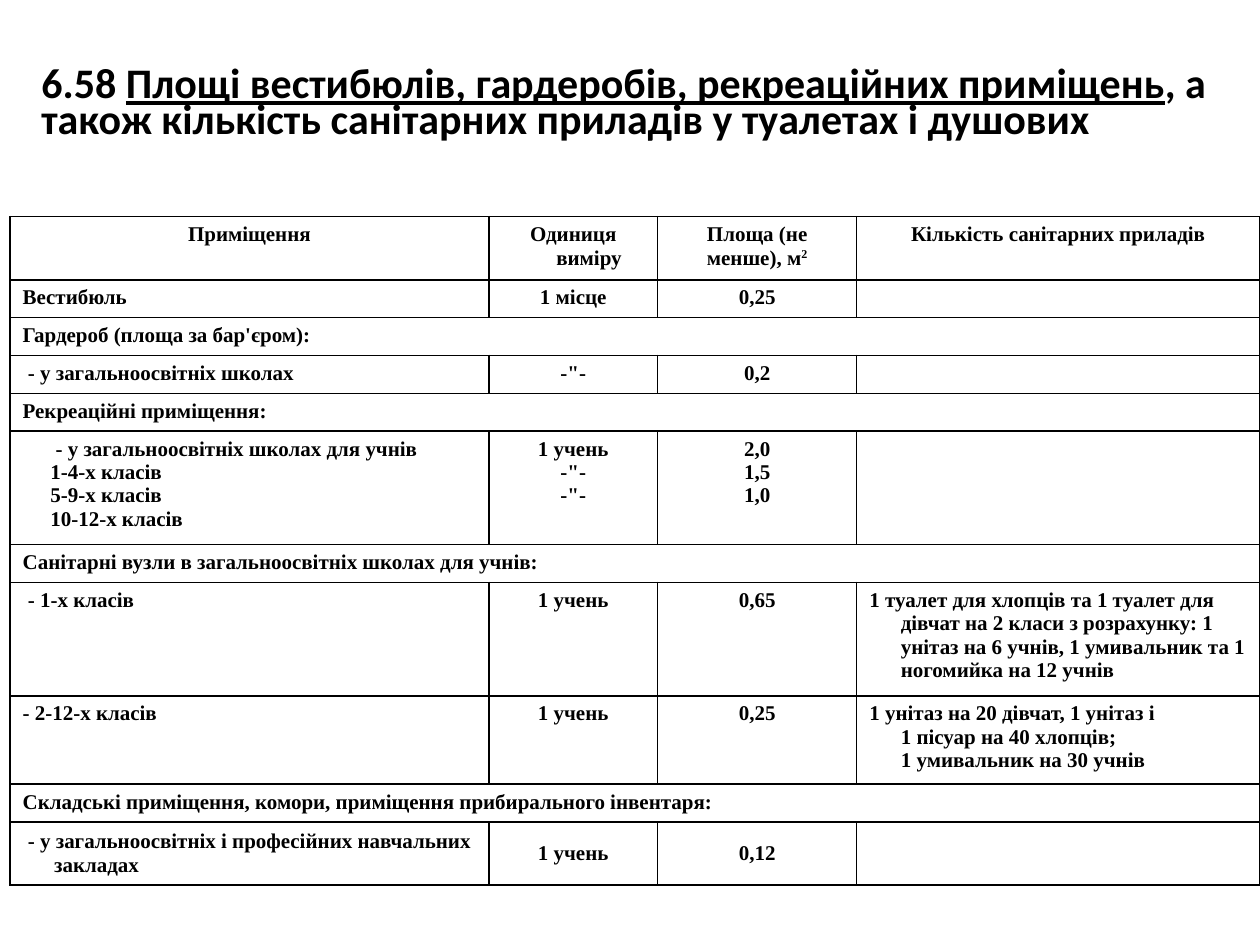
from lxml.etree import SubElement
from pptx import Presentation
from pptx.dml.color import RGBColor
from pptx.enum.text import MSO_ANCHOR as Anchor, PP_ALIGN as Align
from pptx.oxml.ns import qn
from pptx.util import Inches, Pt

BLACK = RGBColor(0, 0, 0)
WHITE = RGBColor(255, 255, 255)
TITLE_FONT, TABLE_FONT = "Calibri", "Times New Roman"

TITLE_SPANS = [
    ("6.58 ", False),
    ("Площі вестибюлів, гардеробів, рекреаційних приміщень", True),
    (", а також кількість санітарних приладів у туалетах і душових", False),
]

COLUMN_WIDTHS = [3.8, 1.34, 1.58, 3.2]
LINE_HEIGHT, ROW_PADDING = 0.185, 0.1
DITTO = '-"-'

# Each row: lines of text it holds, then its cells; a cell is a list of
# paragraphs, and a row with a single cell spans the whole table.
ROWS = [
    (2, [["Приміщення"], ["Одиниця виміру"], ["Площа (не", "менше), м^2"],
         ["Кількість санітарних приладів"]]),
    (1, [["Вестибюль"], ["1 місце"], ["0,25"], []]),
    (1, [["Гардероб (площа за бар'єром):"]]),
    (1, [[" - у загальноосвітніх школах"], [DITTO], ["0,2"], []]),
    (1, [["Рекреаційні приміщення:"]]),
    (4, [[" - у загальноосвітніх школах для учнів", "1-4-х класів",
          "5-9-х класів", "10-12-х класів"],
         ["1 учень", DITTO, DITTO], ["2,0", "1,5", "1,0"], []]),
    (1, [["Санітарні вузли в загальноосвітніх школах для учнів:"]]),
    (4, [[" - 1-х класів"], ["1 учень"], ["0,65"],
         ["1 туалет для хлопців та 1 туалет для дівчат на 2 класи з розрахунку: "
          "1 унітаз на 6 учнів, 1 умивальник та 1 ногомийка на 12 учнів"]]),
    (3, [["- 2-12-х класів"], ["1 учень"], ["0,25"],
         ["1 унітаз на 20 дівчат, 1 унітаз і \n1 пісуар на 40 хлопців; \n"
          "1 умивальник на 30 учнів"]]),
    (1, [["Складські приміщення, комори, приміщення прибирального інвентаря:"]]),
    (2, [[" - у загальноосвітніх і професійних навчальних закладах"],
         ["1 учень"], ["0,12"], []]),
]
LAST_ROW = len(ROWS) - 1


def add_span(para, text, font_name, size):
    span = para.add_run()
    span.text = text
    span.font.name = font_name
    span.font.size = Pt(size)
    span.font.bold = True
    span.font.color.rgb = BLACK
    return span


def add_title(page, left, top, width, height):
    box = page.shapes.add_textbox(Inches(left), Inches(top), Inches(width), Inches(height))
    frame = box.text_frame
    frame.word_wrap = True
    frame.vertical_anchor = Anchor.MIDDLE
    para = frame.paragraphs[0]
    para.line_spacing = 0.7
    for text, underlined in TITLE_SPANS:
        add_span(para, text, TITLE_FONT, 24).font.underline = underlined


def style_cell(cell):
    """White fill, thin black borders and a small font even when empty."""
    properties = cell._tc.get_or_add_tcPr()
    for side in ("a:lnL", "a:lnR", "a:lnT", "a:lnB"):
        line = SubElement(properties, qn(side), w=str(Pt(1)))
        fill = SubElement(line, qn("a:solidFill"))
        SubElement(fill, qn("a:srgbClr"), val=str(BLACK))
    cell.fill.solid()
    cell.fill.fore_color.rgb = WHITE
    SubElement(cell.text_frame.paragraphs[0]._p, qn("a:endParaRPr"), sz="1200")


def write_paragraph(para, text, align, first_indent):
    para.alignment = align
    indents = para._p.get_or_add_pPr()
    indents.set("marL", str(Inches(0.25)))
    indents.set("indent", str(Inches(first_indent)))
    for number, line in enumerate(text.split("\n")):
        if number:
            para.add_line_break()
        body, _, superscript = line.partition("^")
        add_span(para, body, TABLE_FONT, 12)
        if superscript:
            raised = add_span(para, superscript, TABLE_FONT, 12)
            raised._r.get_or_add_rPr().set("baseline", "30000")


def fill_cell(cell, paragraphs, align, first_indent):
    frame = cell.text_frame
    for number, text in enumerate(paragraphs):
        para = frame.add_paragraph() if number else frame.paragraphs[0]
        write_paragraph(para, text, align, first_indent)


def add_norms_table(page, left, top):
    heights = [lines * LINE_HEIGHT + ROW_PADDING for lines, _ in ROWS]
    table = page.shapes.add_table(
        len(ROWS), len(COLUMN_WIDTHS), Inches(left), Inches(top),
        Inches(sum(COLUMN_WIDTHS)), Inches(sum(heights))).table
    for column, width in zip(table.columns, COLUMN_WIDTHS):
        column.width = Inches(width)
    for row, height in zip(table.rows, heights):
        row.height = Inches(height)
        for cell in row.cells:
            style_cell(cell)

    for r, (lines, cells) in enumerate(ROWS):
        if len(cells) == 1:
            table.cell(r, 0).merge(table.cell(r, len(COLUMN_WIDTHS) - 1))
        for c, paragraphs in enumerate(cells):
            cell = table.cell(r, c)
            align = Align.CENTER if r == 0 or c in (1, 2) else Align.LEFT
            is_list = c == 0 and len(paragraphs) > 1
            fill_cell(cell, paragraphs, align, -0.03 if is_list else -0.25)
            if r == LAST_ROW:
                cell.vertical_anchor = Anchor.MIDDLE


def main():
    deck = Presentation()
    deck.slide_width, deck.slide_height = Inches(10), Inches(7.5)
    page = deck.slides.add_slide(deck.slide_layouts[6])
    add_title(page, 0.23, 0.4, 9.48, 0.88)
    add_norms_table(page, 0.08, 1.72)
    deck.save("out.pptx")


if __name__ == "__main__":
    main()
